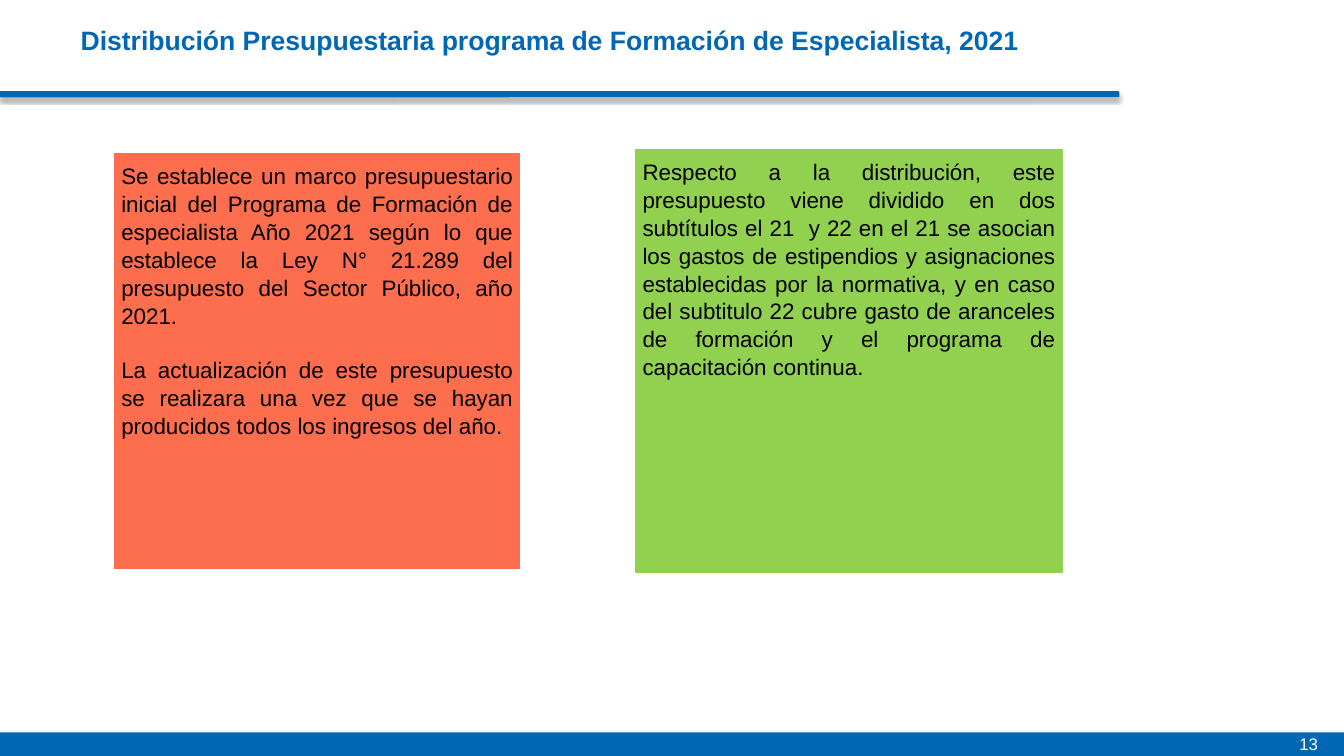
"""Build the slide on the 2021 budget of the specialist training programme."""
import pptx
import pptx.dml.color
import pptx.enum.shapes
import pptx.enum.text
import pptx.oxml
import pptx.util

Pt = pptx.util.Pt
RGB = pptx.dml.color.RGBColor
SHAPE = pptx.enum.shapes.MSO_SHAPE
ALIGN = pptx.enum.text.PP_ALIGN
ANCHOR = pptx.enum.text.MSO_ANCHOR

BLUE = RGB(0x00, 0x67, 0xB4)
CORAL = RGB(0xFC, 0x6E, 0x4D)
GREEN = RGB(0x92, 0xD0, 0x50)
WHITE = RGB(0xFF, 0xFF, 0xFF)
BLACK = RGB(0x00, 0x00, 0x00)

SHADOW = (
    '<a:effectLst xmlns:a="http://schemas.openxmlformats.org/drawingml/2006/main">'
    '<a:outerShdw blurRad="39370" dist="22860" dir="5400000" rotWithShape="0">'
    '<a:srgbClr val="000000"><a:alpha val="35000"/></a:srgbClr>'
    '</a:outerShdw></a:effectLst>'
)
BUDGET = [
    "Se establece un marco presupuestario inicial del Programa de Formación de "
    "especialista Año 2021 según lo que establece la Ley N° 21.289 del "
    "presupuesto del Sector Público, año 2021.",
    "La actualización de este presupuesto se realizara una vez que se hayan "
    "producidos todos los ingresos del año.",
]
SPLIT = [
    "Respecto a la distribución, este presupuesto viene dividido en dos "
    "subtítulos el 21  y 22 en el 21 se asocian los gastos de estipendios y "
    "asignaciones establecidas por la normativa, y en caso del subtitulo 22 "
    "cubre gasto de aranceles de formación y el programa de capacitación "
    "continua.",
]


def add_block(slide, kind, box, fill, line=None):
    """Add a filled shape without a shadow."""
    block = slide.shapes.add_shape(kind, *map(Pt, box))
    block.shadow.inherit = False
    block.fill.solid()
    block.fill.fore_color.rgb = fill
    if line is None:
        block.line.fill.background()
    else:
        block.line.color.rgb = line
        block.line.width = Pt(0.75)
    return block


def write(frame, texts, size, color, inset, bold=False):
    """Fill a text frame with one paragraph per text."""
    frame.word_wrap = True
    frame.vertical_anchor = ANCHOR.TOP
    frame.margin_left = frame.margin_right = Pt(inset[0])
    frame.margin_top = frame.margin_bottom = Pt(inset[1])
    frame.text = "\n".join(texts)
    for para in frame.paragraphs:
        para.alignment = ALIGN.LEFT
        for run in para.runs:
            run.font.name = "Arial"
            run.font.size = Pt(size)
            run.font.bold = bold
            run.font.color.rgb = color


def add_head(slide, box):
    """Add the title and the shaded rule below it."""
    left, top, width, height = box
    title = slide.shapes.add_textbox(
        Pt(left + 57.6), Pt(top + 17.3), Pt(width - 57.6), Pt(24))
    write(title.text_frame,
          ["Distribución Presupuestaria programa de Formación de Especialista, 2021"],
          19, BLUE, (0, 0), True)
    rule = add_block(slide, SHAPE.ROUNDED_RECTANGLE,
                     (left, top + height - 3.6, 799.2, 3.6), BLUE, BLUE)
    rule.adjustments[0] = 0.12
    props = rule.element.spPr
    props.remove(props.find(pptx.oxml.ns.qn("a:effectLst")))
    props.append(pptx.oxml.parse_xml(SHADOW))


def add_panel(slide, box, fill, texts):
    """Add a coloured panel of justified text."""
    panel = add_block(slide, SHAPE.RECTANGLE, box, fill, WHITE)
    write(panel.text_frame, texts, 16, BLACK, (5.76, 5.76))
    for index, para in enumerate(panel.text_frame.paragraphs):
        para.alignment = ALIGN.JUSTIFY
        para.line_spacing = 1.04
        if index:
            para.space_before = Pt(19.2)


def add_foot(slide, box):
    """Add the bottom band with the page number."""
    left, top, width, height = box
    add_block(slide, SHAPE.RECTANGLE, box, BLUE)
    page = slide.shapes.add_textbox(
        Pt(left + width - 39), Pt(top - 2.8), Pt(39), Pt(height + 2.8))
    write(page.text_frame, ["13"], 12, WHITE, (7.2, 3.6))


def main():
    """Build and save the deck."""
    deck = pptx.Presentation()
    deck.slide_width, deck.slide_height = Pt(960), Pt(540)
    slide = deck.slides.add_slide(deck.slide_layouts[6])
    add_head(slide, (0, 0, 820.8, 69.1))
    add_panel(slide, (80.9, 109.2, 291.3, 297.7), CORAL, BUDGET)
    add_panel(slide, (453.2, 106.3, 306.4, 303.6), GREEN, SPLIT)
    add_foot(slide, (0, 523.2, 960, 16.8))
    deck.save("out.pptx")


if __name__ == "__main__":
    main()
